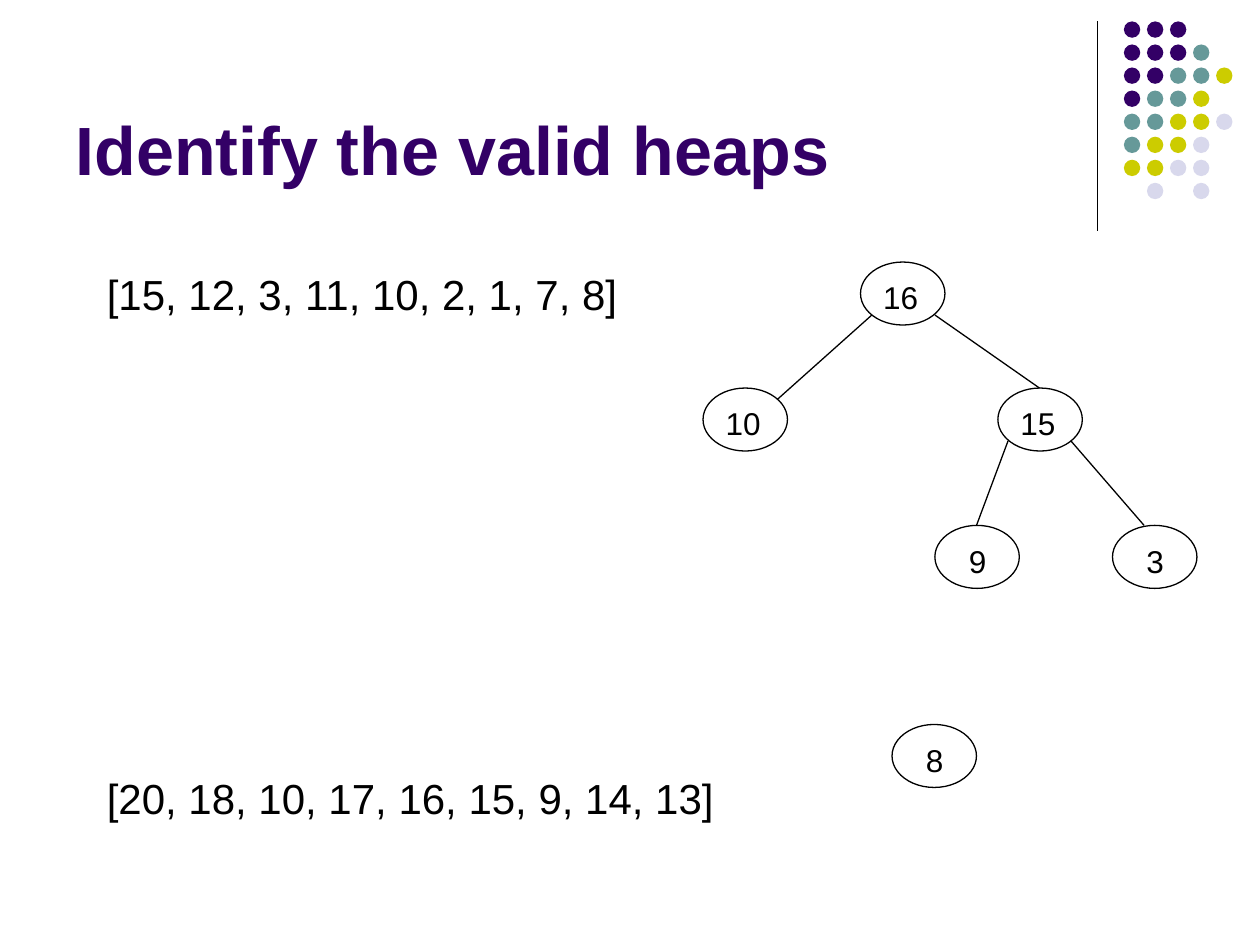
from lxml import etree
from pptx import Presentation
from pptx import util as u
from pptx.dml.color import RGBColor
from pptx.enum import shapes, text
from pptx.oxml import ns


def color(value):
    return RGBColor.from_string(value)


class HeapSlide:
    font = "Arial"
    ink = "000000"
    title_color = "330066"
    line_width = u.Pt(0.75)

    def __init__(self, prs):
        self.s = prs.slides.add_slide(prs.slide_layouts[5])

    def box(self, *lengths):
        return [u.Inches(n) for n in lengths]

    def style(self, p, size, value, bold=False):
        p.alignment = text.PP_ALIGN.LEFT
        p.font.name = self.font
        p.font.size = u.Pt(size)
        p.font.bold = bold
        p.font.color.rgb = color(value)

    def title(self, words, x, y, w, h):
        sp = self.s.shapes.title
        sp.left, sp.top, sp.width, sp.height = self.box(x, y, w, h)
        tf = sp.text_frame
        tf.text = words
        tf.word_wrap = True
        tf.auto_size = text.MSO_AUTO_SIZE.NONE
        tf.vertical_anchor = text.MSO_ANCHOR.BOTTOM
        self.style(tf.paragraphs[0], 39, self.title_color, True)

    def label(self, words, x, y, w, h, size=24, parent=None):
        target = parent or self.s
        sp = target.shapes.add_textbox(*self.box(x, y, w, h))
        tf = sp.text_frame
        tf.text = words
        tf.word_wrap = True
        tf.auto_size = text.MSO_AUTO_SIZE.SHAPE_TO_FIT_TEXT
        p = tf.paragraphs[0]
        p.space_before = u.Pt(size * 0.1)
        self.style(p, size, self.ink)

    def ellipse(self, parent, x, y, w, h, fill=None):
        sp = parent.shapes.add_shape(shapes.MSO_SHAPE.OVAL, *self.box(x, y, w, h))
        sp.shadow.inherit = False
        if fill:
            sp.fill.solid()
            sp.fill.fore_color.rgb = color(fill)
            sp.line.fill.background()
        else:
            sp.fill.background()
            sp.line.color.rgb = color(self.ink)
            sp.line.width = self.line_width

    def node(self, value, x, y):
        group = self.s.shapes.add_group_shape()
        self.ellipse(group, x, y, 0.67, 0.5)
        indent = 0.17 if value < 10 else 0.08
        self.label(str(value), x + indent, y + 0.08, 0.58, 0.4, 18, group)

    def line(self, x1, y1, x2, y2):
        sp = self.s.shapes.add_connector(
            shapes.MSO_CONNECTOR.STRAIGHT, *self.box(x1, y1, x2, y2))
        sp.line.color.rgb = color(self.ink)
        sp.line.width = self.line_width
        etree.SubElement(sp._element.spPr, ns.qn("a:effectLst"))

    def dots(self, rows, palette, x, y, pitch, size):
        group = self.s.shapes.add_group_shape()
        for i, row in enumerate(rows):
            for j, key in enumerate(row):
                if key in palette:
                    self.ellipse(group, x + j * pitch, y + i * pitch,
                                 size, size, palette[key])


def main():
    prs = Presentation()
    prs.slide_width, prs.slide_height = u.Inches(10), u.Inches(7.5)
    heap = HeapSlide(prs)

    heap.line(8.71, 0.17, 8.71, 1.83)
    palette = {"P": "330066", "T": "669999", "Y": "CCCC00", "L": "D8D8EC"}
    rows = ["PPP", "PPPT", "PPTTY", "PTTY", "TTYYL", "TYYL", "YYLL", ".L.L"]
    heap.dots(rows, palette, 8.92, 0.17, 0.183, 0.13)

    heap.title("Identify the valid heaps", 0.5, 0.13, 8.25, 1.42)
    heap.label("[15, 12, 3, 11, 10, 2, 1, 7, 8]", 0.75, 2.08, 4.67, 0.5)
    heap.label("[20, 18, 10, 17, 16, 15, 9, 14, 13]", 0.75, 6.08, 5.33, 0.5)

    nodes = [(8, 7.08, 5.75), (16, 6.83, 2.08), (10, 5.58, 3.08),
             (15, 7.92, 3.08), (9, 7.42, 4.17), (3, 8.83, 4.17)]
    for value, x, y in nodes:
        heap.node(value, x, y)

    edges = [(6.92, 2.5, 6.17, 3.17), (7.42, 2.5, 8.25, 3.08),
             (8.5, 3.5, 9.08, 4.17), (8, 3.5, 7.75, 4.17)]
    for edge in edges:
        heap.line(*edge)

    prs.save("out.pptx")


if __name__ == "__main__":
    main()
